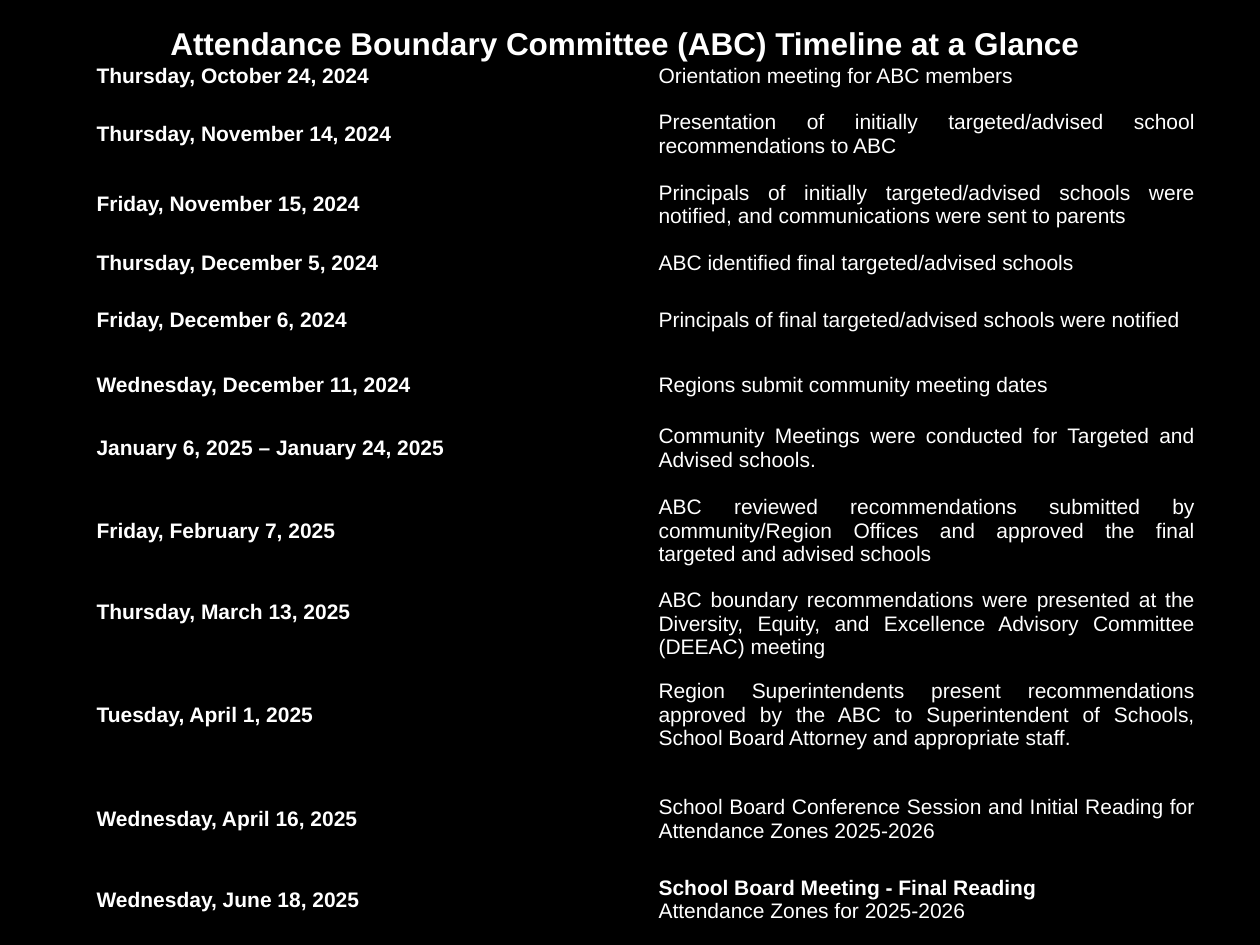
"""Build the Attendance Boundary Committee timeline slide."""
import pptx
import pptx.dml.color
import pptx.enum.text
import pptx.oxml.ns
import pptx.util

SCALE = 914400 / 126
NO_STYLE_NO_GRID = "{2D5ABB26-0587-4C30-8999-92F81FD0307C}"
ALIGN = pptx.enum.text.PP_ALIGN
ANCHOR = pptx.enum.text.MSO_ANCHOR


def px(length):
    return pptx.util.Emu(round(length * SCALE))


def add_text(paragraph, text, size, bold, alignment):
    paragraph.alignment = alignment
    run = paragraph.add_run()
    run.text = text
    run.font.name = "Arial"
    run.font.size = pptx.util.Pt(size)
    run.font.bold = bold
    run.font.color.rgb = pptx.dml.color.RGBColor.from_string("FFFFFF")


timeline = [
    (47, "Thursday, October 24, 2024", "Orientation meeting for ABC members"),
    (68, "Thursday, November 14, 2024",
     "Presentation of initially targeted/advised school recommendations to ABC"),
    (73, "Friday, November 15, 2024",
     "Principals of initially targeted/advised schools were notified, "
     "and communications were sent to parents"),
    (45, "Thursday, December 5, 2024", "ABC identified final targeted/advised schools"),
    (68, "Friday, December 6, 2024",
     "Principals of final targeted/advised schools were notified"),
    (63, "Wednesday, December 11, 2024", "Regions submit community meeting dates"),
    (63, "January 6, 2025 – January 24, 2025",
     "Community Meetings were conducted for Targeted and Advised schools."),
    (102, "Friday, February 7, 2025",
     "ABC reviewed recommendations submitted by community/Region Offices "
     "and approved the final targeted and advised schools"),
    (84, "Thursday, March 13, 2025",
     "ABC boundary recommendations were presented at the Diversity, Equity, "
     "and Excellence Advisory Committee (DEEAC) meeting"),
    (117, "Tuesday, April 1, 2025",
     "Region Superintendents present recommendations approved by the ABC to "
     "Superintendent of Schools, School Board Attorney and appropriate staff."),
    (73, "Wednesday, April 16, 2025",
     "School Board Conference Session and Initial Reading for Attendance Zones 2025-2026"),
    (88, "Wednesday, June 18, 2025", "School Board Meeting - Final Reading"),
]
bottom_margins = {(8, 0): 30, (9, 0): 25, (9, 1): 25}

presentation = pptx.Presentation()
presentation.slide_width = px(1260)
presentation.slide_height = px(945)
slide = presentation.slides.add_slide(presentation.slide_layouts[5])
slide.background.fill.solid()
slide.background.fill.fore_color.rgb = pptx.dml.color.RGBColor.from_string("000000")

title = slide.shapes.title
title.left, title.top, title.width, title.height = px(15), px(18), px(1229), px(50)
title.text_frame.word_wrap = True
title.text_frame.auto_size = pptx.enum.text.MSO_AUTO_SIZE.NONE
title.text_frame.vertical_anchor = ANCHOR.TOP
add_text(title.text_frame.paragraphs[0],
         "Attendance Boundary Committee (ABC) Timeline at a Glance ", 18, True, ALIGN.CENTER)

table_height = sum(height for height, date, event in timeline)
frame = slide.shapes.add_table(len(timeline), 2, px(84), px(53), px(1124), px(table_height))
table = frame.table
table.first_row = False
table.horz_banding = False
for style in frame.element.iter(pptx.oxml.ns.qn("a:tableStyleId")):
    style.text = NO_STYLE_NO_GRID

for row, (height, date, event) in enumerate(timeline):
    table.rows[row].height = px(height)
    for column, text in enumerate((date, event)):
        cell = table.cell(row, column)
        cell.fill.background()
        cell.vertical_anchor = ANCHOR.MIDDLE
        cell.margin_top = px(6)
        cell.margin_bottom = px(bottom_margins.get((row, column), 6))
        bold = column == 0 or row == len(timeline) - 1
        add_text(cell.text_frame.paragraphs[0], text, 12, bold,
                 ALIGN.JUSTIFY if column else ALIGN.LEFT)

final_cell = table.cell(len(timeline) - 1, 1)
add_text(final_cell.text_frame.add_paragraph(), "Attendance Zones for 2025-2026",
         12, False, ALIGN.JUSTIFY)

presentation.save("out.pptx")
